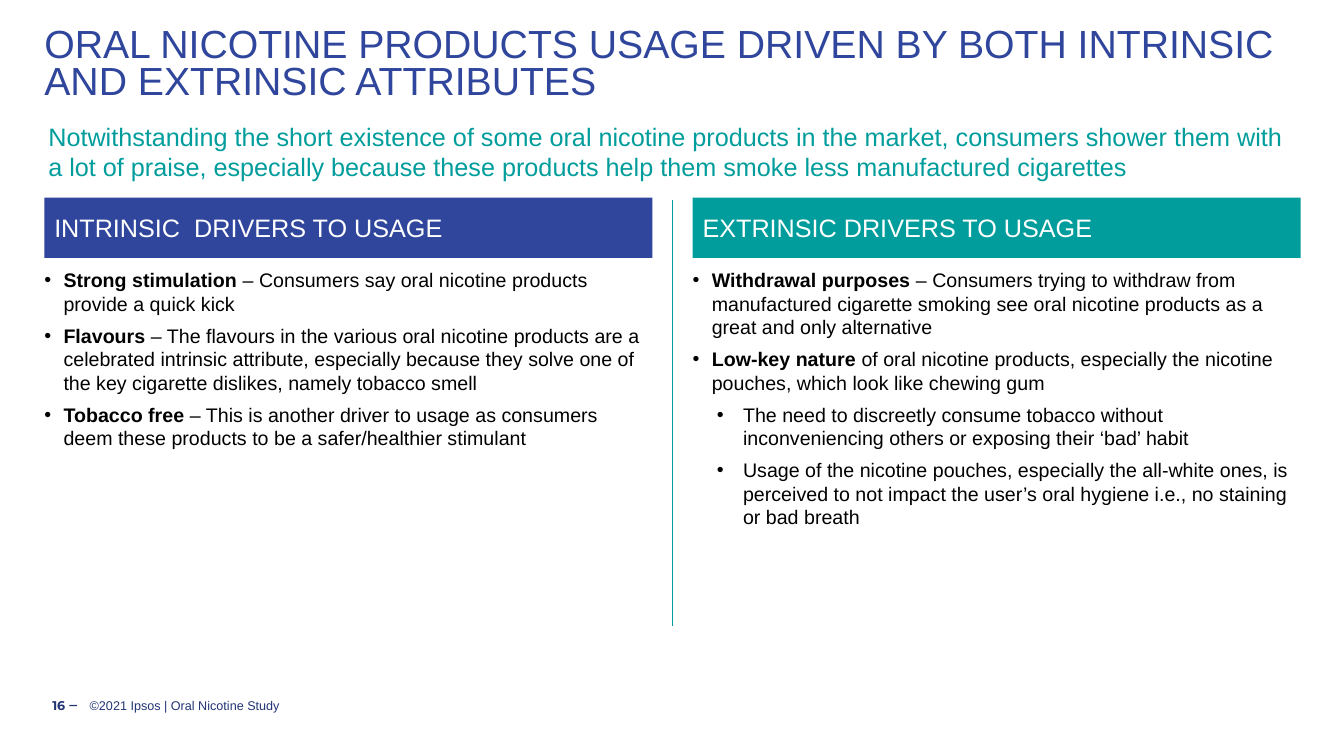
from lxml import etree
from pptx import Presentation
from pptx.dml.color import RGBColor
from pptx.enum.shapes import MSO_CONNECTOR, MSO_SHAPE
from pptx.enum.text import MSO_ANCHOR as Anchor, MSO_AUTO_SIZE as AutoSize, PP_ALIGN as Align
from pptx.oxml.ns import qn
from pptx.util import Pt

PX = 9144  # 100 px to the inch
COLORS = {"blue": "2F469C", "teal": "009D9C", "navy": "233475",
          "black": "000000", "white": "FFFFFF"}
BULLET_INDENTS = [(19, 19), (50, 26)]  # left margin and hang of each level

TITLE = "ORAL NICOTINE PRODUCTS USAGE DRIVEN BY BOTH INTRINSIC AND EXTRINSIC ATTRIBUTES"
SUBTITLE = ("Notwithstanding the short existence of some oral nicotine products in the market, "
            "consumers shower them with a lot of praise, especially because these products "
            "help them smoke less manufactured cigarettes")
# Each point: level, bold lead, remaining text
INTRINSIC = [
    (0, "Strong stimulation ", "– Consumers say oral nicotine products provide a quick kick"),
    (0, "Flavours ", "– The flavours in the various oral nicotine products are a celebrated "
     "intrinsic attribute, especially because they solve one of the key cigarette dislikes, "
     "namely tobacco smell"),
    (0, "Tobacco free ", "– This is another driver to usage as consumers deem these products "
     "to be a safer/healthier stimulant"),
]
EXTRINSIC = [
    (0, "Withdrawal purposes ", "– Consumers trying to withdraw from manufactured cigarette "
     "smoking see oral nicotine products as a great and only alternative"),
    (0, "Low-key nature ", "of oral nicotine products, especially the nicotine pouches, "
     "which look like chewing gum"),
    (1, "", "The need to discreetly consume tobacco without inconveniencing others or "
     "exposing their ‘bad’ habit"),
    (1, "", "Usage of the nicotine pouches, especially the all-white ones, is perceived to not "
     "impact the user’s oral hygiene i.e., no staining or bad breath"),
]


def px(*lengths):
    return [length * PX for length in lengths]


def rgb(name):
    return RGBColor.from_string(COLORS[name])


def style(span, size, color, bold=False, face="Arial"):
    font = span.font
    font.name, font.size, font.bold = face, Pt(size), bold
    font.color.rgb = rgb(color)


def set_frame(shape, anchor=Anchor.TOP, side=0):
    frame = shape.text_frame
    frame.word_wrap = True
    frame.auto_size = AutoSize.NONE
    frame.vertical_anchor = anchor
    frame.margin_left = frame.margin_right = side * PX
    frame.margin_top = frame.margin_bottom = 0
    return frame


def add_text(slide, box, text, size, color, anchor=Anchor.TOP, align=Align.LEFT, **font):
    frame = set_frame(slide.shapes.add_textbox(*px(*box)), anchor)
    frame.text = text
    para = frame.paragraphs[0]
    para.alignment = align
    style(para.runs[0], size, color, **font)


def add_title(slide, box):
    title = slide.shapes.title
    title.left, title.top, title.width, title.height = px(*box)
    frame = set_frame(title)
    frame.text = TITLE
    para = frame.paragraphs[0]
    para.alignment = Align.LEFT
    para.line_spacing = 0.8
    style(para.runs[0], 28, "blue")


def set_bullet(para, level):
    margin, hang = BULLET_INDENTS[level]
    para.level = level
    props = para._p.get_or_add_pPr()
    props.set("marL", str(margin * PX))
    props.set("indent", str(-hang * PX))
    color = etree.SubElement(props, qn("a:buClr"))
    etree.SubElement(color, qn("a:srgbClr"), val=COLORS["black"])
    etree.SubElement(props, qn("a:buFont"), typeface="Arial")
    etree.SubElement(props, qn("a:buChar"), char="•")


def add_points(slide, box, points):
    frame = set_frame(slide.shapes.add_textbox(*px(*box)))
    for index, (level, lead, rest) in enumerate(points):
        para = frame.add_paragraph() if index else frame.paragraphs[0]
        set_bullet(para, level)
        if index:
            para.space_before = Pt(6)
        for text, bold in ((lead, True), (rest, False)):
            if text:
                span = para.add_run()
                span.text = text
                style(span, 14, "black", bold)


def add_drivers(slide, box, heading, color, points):
    """Place a coloured heading bar with its bulleted points below."""
    left, top, width, height = box
    bar_height, gap = 60, 10
    bar = slide.shapes.add_shape(MSO_SHAPE.RECTANGLE, *px(left, top, width, bar_height))
    bar.shadow.inherit = False
    bar.fill.solid()
    bar.fill.fore_color.rgb = rgb(color)
    bar.line.fill.background()
    frame = set_frame(bar, Anchor.MIDDLE, side=10)
    frame.text = heading
    para = frame.paragraphs[0]
    para.alignment = Align.LEFT
    style(para.runs[0], 18, "white")
    offset = bar_height + gap
    add_points(slide, (left, top + offset, width, height - offset), points)


def add_divider(slide, x, top, bottom):
    line = slide.shapes.add_connector(MSO_CONNECTOR.STRAIGHT, *px(x, top, x, bottom))
    line.line.color.rgb = rgb("teal")
    line.line.width = Pt(1)
    etree.SubElement(line._element.spPr, qn("a:effectLst"))


def add_footer(slide, box):
    left, top, width, height = box
    number_width, text_offset = 35, 47
    add_text(slide, (left, top, number_width, height), "16 ‒", 9, "navy",
             Anchor.MIDDLE, Align.RIGHT, bold=True, face="Montserrat")
    add_text(slide, (left + text_offset, top, width - text_offset, height),
             "©2021 Ipsos | Oral Nicotine Study", 9, "navy", Anchor.MIDDLE)


def add_drivers_slide(deck):
    slide = deck.slides.add_slide(deck.slide_layouts[5])
    add_title(slide, (44, 28, 1245, 75))
    add_text(slide, (48, 120, 1234, 61), SUBTITLE, 18, "teal")
    add_drivers(slide, (44, 196, 603, 425), "INTRINSIC  DRIVERS TO USAGE", "blue", INTRINSIC)
    add_divider(slide, 667, 198, 621)
    add_drivers(slide, (687, 196, 603, 425), "EXTRINSIC DRIVERS TO USAGE", "teal", EXTRINSIC)
    add_footer(slide, (42, 680, 1190, 40))


def main():
    deck = Presentation()
    deck.slide_width, deck.slide_height = px(1333, 750)
    add_drivers_slide(deck)
    deck.save("out.pptx")


if __name__ == "__main__":
    main()
